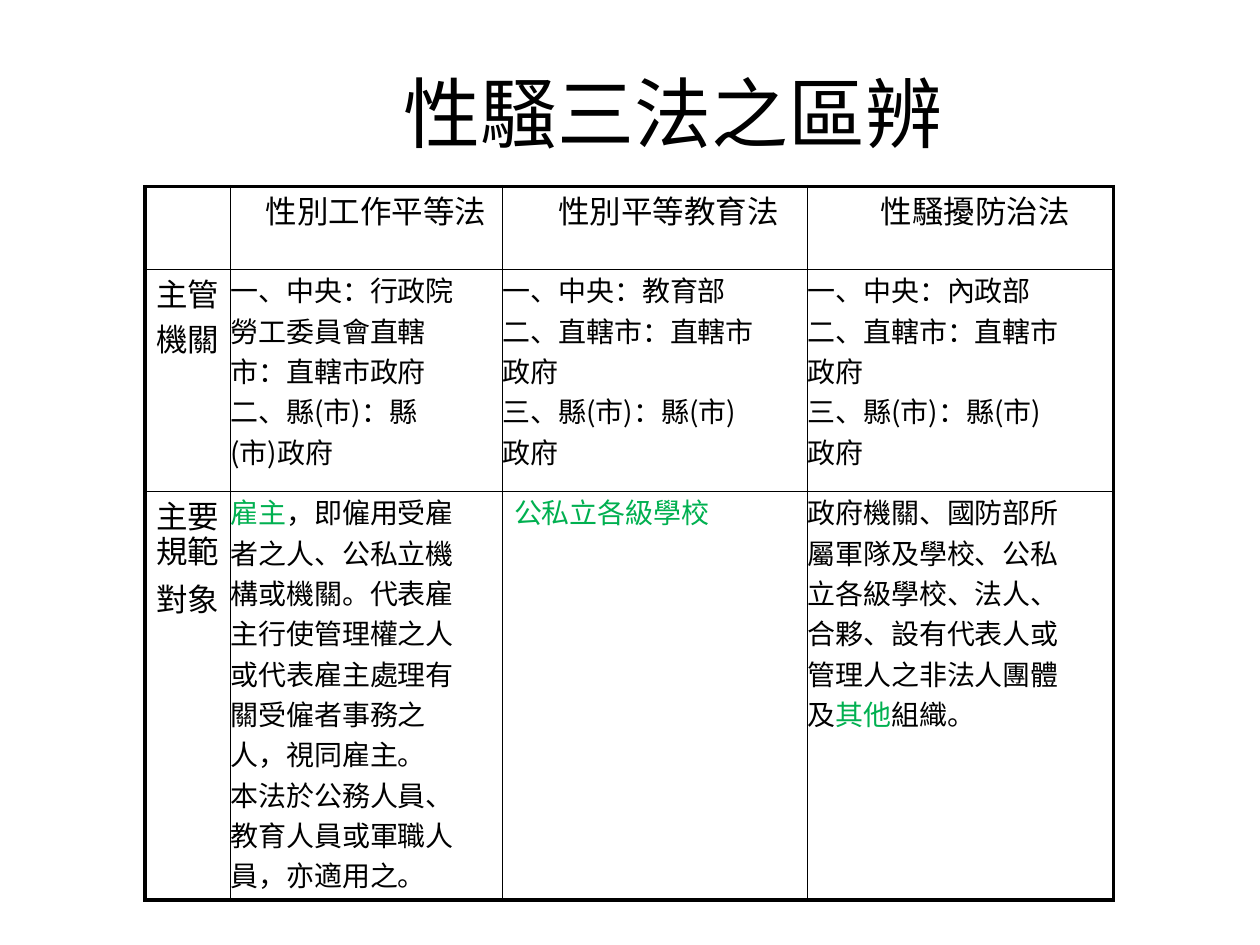
"""Builds a slide with a table that compares three laws on harassment."""
from dataclasses import dataclass

import lxml.etree
import pptx
import pptx.dml.color
import pptx.enum.text
import pptx.oxml.ns
import pptx.util

WIDE, HIGH = 10, 7.5
SANS, LABEL = "Noto Sans CJK SC", "Noto Sans CJK TC"
BLACK, GREEN = "000000", "00B050"
THICK, THIN = 2.25, 1
COLS = [0.68, 2.16, 2.42, 2.43]
ROWS = [0.66, 0.36, 1.4, 0.36, 0.3, 2.58]
BANDS = [(0, 0), (1, 2), (3, 5)]


@dataclass
class Entry:
    """Text of one cell; a line is a string or a list of (text, colour) runs."""
    row: int
    col: int
    lines: list
    size: float = 16
    font: str = SANS
    indent: float = 0
    before: float = 1
    pitch: float = 0


def label(row: int, text: str, pitch: float = 0) -> Entry:
    """Describe a row label in the first column."""
    return Entry(row, 0, [text], 18, LABEL, 0.09, 0, pitch)


ENTRIES = [
    Entry(0, 1, ["性別工作平等法"], 18, indent=0.28),
    Entry(0, 2, ["性別平等教育法"], 18, indent=0.44),
    Entry(0, 3, ["性騷擾防治法"], 18, indent=0.58),
    label(1, "主管"),
    label(2, "機關"),
    label(3, "主要"),
    label(4, "規範", 20),
    label(5, "對象"),
    Entry(1, 1, ["一、中央：行政院", "勞工委員會直轄", "市：直轄市政府",
                 "二、縣(市)：縣", "(市)政府"]),
    *(Entry(1, col, [f"一、中央：{office}", "二、直轄市：直轄市", "政府",
                     "三、縣(市)：縣(市)", "政府"])
      for col, office in [(2, "教育部"), (3, "內政部")]),
    Entry(3, 1, [[("雇主", GREEN), ("，即僱用受雇", BLACK)],
                 "者之人、公私立機", "構或機關。代表雇", "主行使管理權之人",
                 "或代表雇主處理有", "關受僱者事務之", "人，視同雇主。",
                 "本法於公務人員、", "教育人員或軍職人", "員，亦適用之。"]),
    Entry(3, 2, [[("公私立各級學校", GREEN)]], indent=0.09),
    Entry(3, 3, ["政府機關、國防部所", "屬軍隊及學校、公私", "立各級學校、法人、",
                 "合夥、設有代表人或", "管理人之非法人團體",
                 [("及", BLACK), ("其他", GREEN), ("組織。", BLACK)]]),
]


def paint(color, shade: str) -> None:
    """Set a colour from a hex string."""
    color.rgb = pptx.dml.color.RGBColor.from_string(shade)


def style(para, size: float, font: str, indent: float) -> None:
    """Set the font and left indent of a paragraph."""
    para.font.size = pptx.util.Pt(size)
    paint(para.font.color, BLACK)
    para.font.name = font
    props = para._p.get_or_add_pPr()
    props.set("marL", str(pptx.util.Inches(indent)))
    props.set("indent", "0")
    base = props.find(pptx.oxml.ns.qn("a:defRPr"))
    lxml.etree.SubElement(base, pptx.oxml.ns.qn("a:ea"), typeface=font)


def edge(cell, side: str, width: float) -> None:
    """Draw one cell border, or clear it when the width is zero."""
    qn = pptx.oxml.ns.qn
    props = cell._tc.get_or_add_tcPr()
    line = lxml.etree.SubElement(props, qn(f"a:ln{side}"),
                                 w=str(pptx.util.Pt(width)))
    if width:
        fill = lxml.etree.SubElement(line, qn("a:solidFill"))
        lxml.etree.SubElement(fill, qn("a:srgbClr"), val=BLACK)
    else:
        lxml.etree.SubElement(line, qn("a:noFill"))


def frame(table) -> None:
    """Rule each band of rows, with a thick line round the table."""
    last = len(COLS) - 1
    for first, final in BANDS:
        top = THIN if first else THICK
        base = THIN if final < len(ROWS) - 1 else THICK
        for row in range(first, final + 1):
            for col in range(len(COLS)):
                cell = table.cell(row, col)
                ends = row == final or (col and row == first)
                edge(cell, "L", THIN if col else THICK)
                edge(cell, "R", THIN if col < last else THICK)
                edge(cell, "T", top if row == first else 0)
                edge(cell, "B", base if ends else 0)
                cell.fill.background()
                cell.margin_left = cell.margin_right = 0
                cell.margin_top = cell.margin_bottom = 0


def write(table, entry: Entry) -> None:
    """Fill a cell with the lines of its entry."""
    text = table.cell(entry.row, entry.col).text_frame
    for num, line in enumerate(entry.lines):
        para = text.add_paragraph() if num else text.paragraphs[0]
        if not num:
            para.space_before = pptx.util.Pt(entry.before)
        if entry.pitch:
            para.line_spacing = pptx.util.Pt(entry.pitch)
        style(para, entry.size, entry.font, entry.indent)
        for words, shade in [(line, BLACK)] if isinstance(line, str) else line:
            run = para.add_run()
            run.text = words
            if shade != BLACK:
                paint(run.font.color, shade)


def head(slide) -> None:
    """Place and format the title."""
    inch = pptx.util.Inches
    title = slide.shapes.title
    title.left, title.top = inch(1.14), inch(0.44)
    title.width, title.height = inch(7.15), inch(0.82)
    text = title.text_frame
    text.text = "性騷三法之區辨"
    text.margin_left = text.margin_right = text.margin_bottom = 0
    text.margin_top = inch(0.08)
    text.vertical_anchor = pptx.enum.text.MSO_ANCHOR.MIDDLE
    text.auto_size = pptx.enum.text.MSO_AUTO_SIZE.NONE
    para = text.paragraphs[0]
    para.alignment = pptx.enum.text.PP_ALIGN.CENTER
    style(para, 44, SANS, 1.25)


def grid(slide) -> None:
    """Add the table of laws."""
    inch = pptx.util.Inches
    table = slide.shapes.add_table(
        len(ROWS), len(COLS), inch(1.15), inch(1.48),
        inch(sum(COLS)), inch(sum(ROWS))).table
    table.first_row = table.horz_banding = False
    for col, width in zip(table.columns, COLS):
        col.width = inch(width)
    for row, height in zip(table.rows, ROWS):
        row.height = inch(height)
    frame(table)
    for first, final in BANDS[1:]:
        for col in range(1, len(COLS)):
            table.cell(first, col).merge(table.cell(final, col))
    for entry in ENTRIES:
        write(table, entry)


def main() -> None:
    """Build and save the slide."""
    deck = pptx.Presentation()
    deck.slide_width = pptx.util.Inches(WIDE)
    deck.slide_height = pptx.util.Inches(HIGH)
    slide = deck.slides.add_slide(deck.slide_layouts[5])
    head(slide)
    grid(slide)
    deck.save("out.pptx")


if __name__ == "__main__":
    main()
